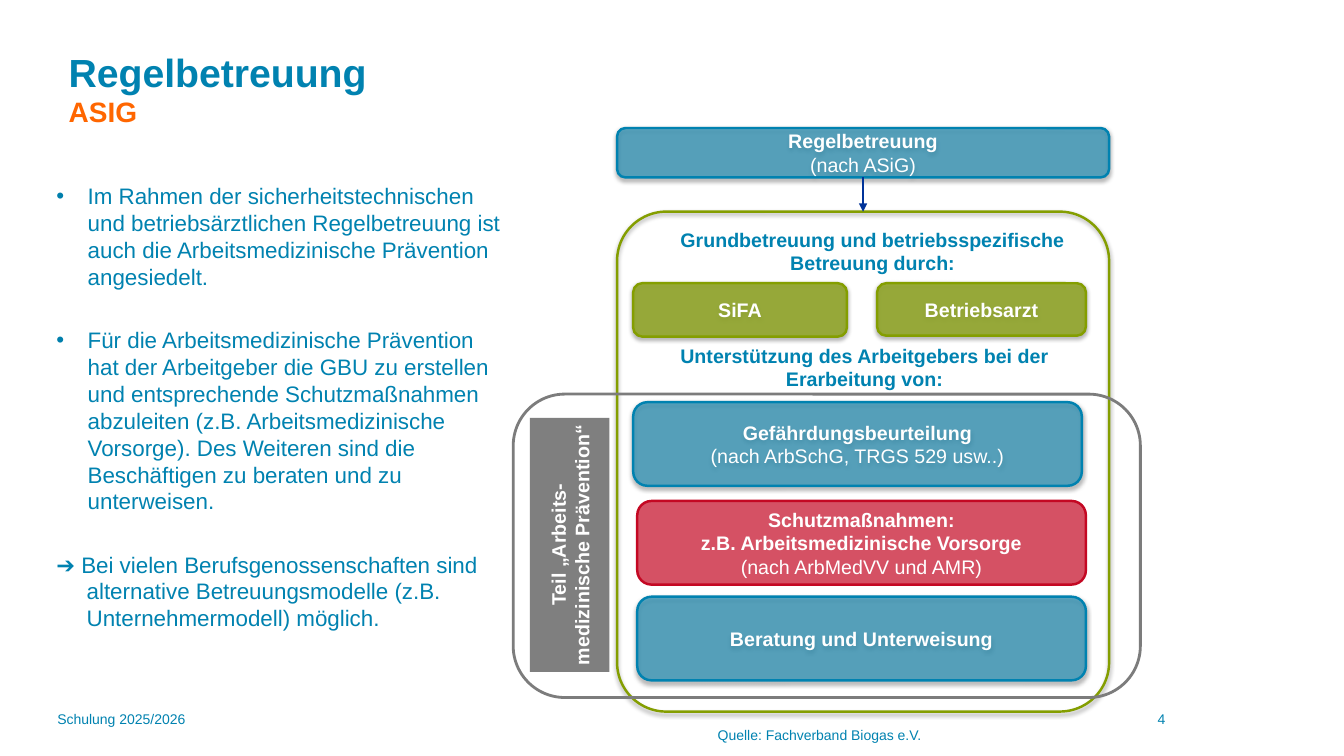
"""Build the slide on standard occupational safety support under the ASiG."""
from dataclasses import dataclass

from lxml import etree
from pptx import Presentation
from pptx.dml.color import RGBColor
from pptx.enum.shapes import MSO_CONNECTOR, MSO_SHAPE
from pptx.enum.text import MSO_ANCHOR, MSO_AUTO_SIZE, PP_ALIGN
from pptx.oxml.ns import qn
from pptx.util import Inches, Pt

RECT, ROUND = MSO_SHAPE.RECTANGLE, MSO_SHAPE.ROUNDED_RECTANGLE
STRAIGHT = MSO_CONNECTOR.STRAIGHT
TOP, MIDDLE = MSO_ANCHOR.TOP, MSO_ANCHOR.MIDDLE
LEFT, CENTER = PP_ALIGN.LEFT, PP_ALIGN.CENTER
NO_AUTOFIT = MSO_AUTO_SIZE.NONE


@dataclass(frozen=True)
class Theme:
    """Colours, type sizes and line widths of the slide."""
    font: str = "Arial"
    blue: str = "0082B0"
    bullet: str = "007FAC"
    orange: str = "FF6600"
    green: str = "849E00"
    red: str = "C40823"
    navy: str = "003399"
    gray: str = "7F7F7F"
    outline: str = "7C7C7C"
    white: str = "FFFFFF"
    title: int = 28
    subtitle: int = 20
    body: int = 16
    label: int = 14
    small: int = 10
    line: float = 1.75


@dataclass(frozen=True)
class Box:
    """A shape with optional fill, outline, shadow and centred text."""
    left: float
    top: float
    width: float
    height: float
    text: str = ""
    fill: str = ""
    opacity: int = 100
    line: str = ""
    line_width: float = 1.75
    shadow: int = 0
    bold_lines: int = 1
    kind: int = ROUND
    radius: float = 0.17
    rotation: int = 0


@dataclass(frozen=True)
class Label:
    """A text box without fill."""
    left: float
    top: float
    width: float
    height: float
    text: str
    size: int
    bold: bool = False
    align: int = LEFT
    wrap: bool = True


@dataclass(frozen=True)
class Item:
    """A paragraph of the body list."""
    text: str
    indent: float
    bullet: bool
    before: int


T = Theme()
SHADOW = 38
CARD_WIDTH, CARD_HEIGHT = 4.45, 0.83

ITEMS = [
    Item("Im Rahmen der sicherheitstechnischen und betriebsärztlichen Regelbetreuung ist "
         "auch die Arbeitsmedizinische Prävention angesiedelt.", 0.31, True, 0),
    Item("Für die Arbeitsmedizinische Prävention hat der Arbeitgeber die GBU zu erstellen "
         "und entsprechende Schutzmaßnahmen abzuleiten (z.B. Arbeitsmedizinische Vorsorge). "
         "Des Weiteren sind die Beschäftigen zu beraten und zu unterweisen.", 0.31, True, 26),
    Item("➔ Bei vielen Berufsgenossenschaften sind alternative Betreuungsmodelle "
         "(z.B. Unternehmermodell) möglich.", 0.3, False, 26),
]

BOXES = [
    Box(6.12, 1.27, 4.88, 0.49, "Regelbetreuung\n(nach ASiG)", T.blue, 57, T.blue, shadow=SHADOW),
    Box(6.12, 2.1, 4.88, 4.96, line=T.green, shadow=SHADOW, radius=0.1),
    Box(8.7, 2.81, 2.07, 0.52, "Betriebsarzt", T.green, 70, T.green, shadow=35),
    Box(6.28, 2.81, 2.12, 0.53, "SiFA", T.green, 70, T.green, shadow=35),
    Box(6.28, 3.99, CARD_WIDTH, CARD_HEIGHT,
        "Gefährdungsbeurteilung\n(nach ArbSchG, TRGS 529 usw..)", T.blue, 57, T.blue, shadow=SHADOW),
    Box(6.32, 4.97, CARD_WIDTH, CARD_HEIGHT,
        "Schutzmaßnahmen:\nz.B. Arbeitsmedizinische Vorsorge\n(nach ArbMedVV und AMR)",
        T.red, 70, T.red, bold_lines=2),
    Box(6.32, 5.92, CARD_WIDTH, CARD_HEIGHT, "Beratung und Unterweisung",
        T.blue, 57, T.blue, shadow=SHADOW),
    Box(4.39, 5.01, 2.52, 0.79, "Teil „Arbeits-\nmedizinische Prävention“", T.gray,
        bold_lines=2, kind=RECT, rotation=270),
    Box(5.09, 3.91, 6.22, 3.01, line=T.outline, line_width=2),
]

LABELS = [
    Label(0.47, 7, 3.25, 0.5, "Schulung 2025/2026", T.small),
    Label(10.13, 7, 2.78, 0.5, "4", T.small, align=CENTER),
    Label(7.02, 7.16, 2.25, 0.27, "Quelle: Fachverband Biogas e.V.", T.small, wrap=False),
    Label(6.44, 2.21, 4.43, 0.57, "Grundbetreuung und betriebsspezifische Betreuung durch:",
          T.label, True, CENTER),
    Label(6.35, 3.36, 4.45, 0.81, "Unterstützung des Arbeitgebers bei der Erarbeitung von:",
          T.label, True, CENTER),
]


def format_runs(p, size: int, color: str, bold: bool, align=LEFT) -> None:
    """Format a paragraph and its runs."""
    p.alignment = align
    for r in p.runs:
        r.font.name, r.font.size, r.font.bold = T.font, Pt(size), bold
        r.font.color.rgb = RGBColor.from_string(color)


def place(sp, left: float, top: float, width: float, height: float) -> None:
    """Move and size a shape in inches."""
    sp.left, sp.top = Inches(left), Inches(top)
    sp.width, sp.height = Inches(width), Inches(height)


def add_shadow(sp, opacity: int) -> None:
    """Give a shape a soft shadow below."""
    effects = sp._element.spPr.find(qn("a:effectLst"))
    shadow = etree.SubElement(effects, qn("a:outerShdw"), blurRad=str(Pt(3.1)),
                              dist=str(Pt(1.6)), dir="5400000", rotWithShape="0")
    color = etree.SubElement(shadow, qn("a:srgbClr"), val="000000")
    etree.SubElement(color, qn("a:alpha"), val=str(opacity * 1000))


def add_box(s, box: Box) -> None:
    """Draw a box."""
    sp = s.shapes.add_shape(box.kind, Inches(box.left), Inches(box.top),
                            Inches(box.width), Inches(box.height))
    sp.rotation = box.rotation
    sp.shadow.inherit = False
    if box.kind == ROUND:
        sp.adjustments[0] = box.radius
    if box.fill:
        sp.fill.solid()
        sp.fill.fore_color.rgb = RGBColor.from_string(box.fill)
        color = sp._element.spPr.find(qn("a:solidFill"))[0]
        etree.SubElement(color, qn("a:alpha"), val=str(box.opacity * 1000))
    else:
        sp.fill.background()
    if box.line:
        sp.line.color.rgb = RGBColor.from_string(box.line)
        sp.line.width = Pt(box.line_width)
    else:
        sp.line.fill.background()
    if box.shadow:
        add_shadow(sp, box.shadow)
    if box.text:
        tf = sp.text_frame
        tf.text, tf.vertical_anchor, tf.word_wrap = box.text, MIDDLE, not box.rotation
        if box.rotation:
            tf.margin_left = tf.margin_right = tf.margin_top = tf.margin_bottom = 0
        for i, p in enumerate(tf.paragraphs):
            format_runs(p, T.label, T.white, i < box.bold_lines, CENTER)


def add_label(s, label: Label) -> None:
    """Draw a label."""
    sp = s.shapes.add_textbox(Inches(label.left), Inches(label.top),
                              Inches(label.width), Inches(label.height))
    tf = sp.text_frame
    tf.text, tf.word_wrap = label.text, label.wrap
    format_runs(tf.paragraphs[0], label.size, T.blue, label.bold, label.align)


def add_arrow(s, x: float, top: float, bottom: float) -> None:
    """Draw a downward arrow."""
    line = s.shapes.add_connector(STRAIGHT, Inches(x), Inches(top), Inches(x), Inches(bottom))
    line.line.color.rgb = RGBColor.from_string(T.navy)
    line.line.width = Pt(T.line)
    etree.SubElement(line.line._get_or_add_ln(), qn("a:tailEnd"), type="triangle")
    etree.SubElement(line._element.spPr, qn("a:effectLst"))


def fill_title(sp) -> None:
    """Write the title and subtitle."""
    place(sp, 0.58, 0.25, 7.27, 1.25)
    tf = sp.text_frame
    tf.text, tf.vertical_anchor, tf.auto_size = "Regelbetreuung\nASIG", MIDDLE, NO_AUTOFIT
    format_runs(tf.paragraphs[0], T.title, T.blue, True)
    format_runs(tf.paragraphs[1], T.subtitle, T.orange, True)


def fill_body(sp) -> None:
    """Write the list."""
    place(sp, 0.46, 1.76, 4.66, 4.9)
    tf = sp.text_frame
    tf.text = "\n".join(item.text for item in ITEMS)
    tf.vertical_anchor, tf.auto_size = TOP, NO_AUTOFIT
    for p, item in zip(tf.paragraphs, ITEMS):
        pPr = p._p.get_or_add_pPr()
        pPr.set("marL", str(Inches(item.indent)))
        pPr.set("indent", str(-Inches(item.indent)))
        if item.bullet:
            color = etree.SubElement(pPr, qn("a:buClr"))
            etree.SubElement(color, qn("a:srgbClr"), val=T.bullet)
            etree.SubElement(pPr, qn("a:buFont"), typeface=T.font)
            etree.SubElement(pPr, qn("a:buChar"), char="•")
        else:
            etree.SubElement(pPr, qn("a:buNone"))
        p.space_before = Pt(item.before)
        format_runs(p, T.body, T.blue, False)


def main() -> None:
    """Build and save the presentation."""
    prs = Presentation()
    prs.slide_width, prs.slide_height = Inches(13.33), Inches(7.5)
    s = prs.slides.add_slide(prs.slide_layouts[1])
    fill_title(s.shapes.title)
    fill_body(s.placeholders[1])
    for box in BOXES:
        add_box(s, box)
    for label in LABELS:
        add_label(s, label)
    add_arrow(s, 8.56, 1.76, 2.1)
    prs.save("out.pptx")


if __name__ == "__main__":
    main()
